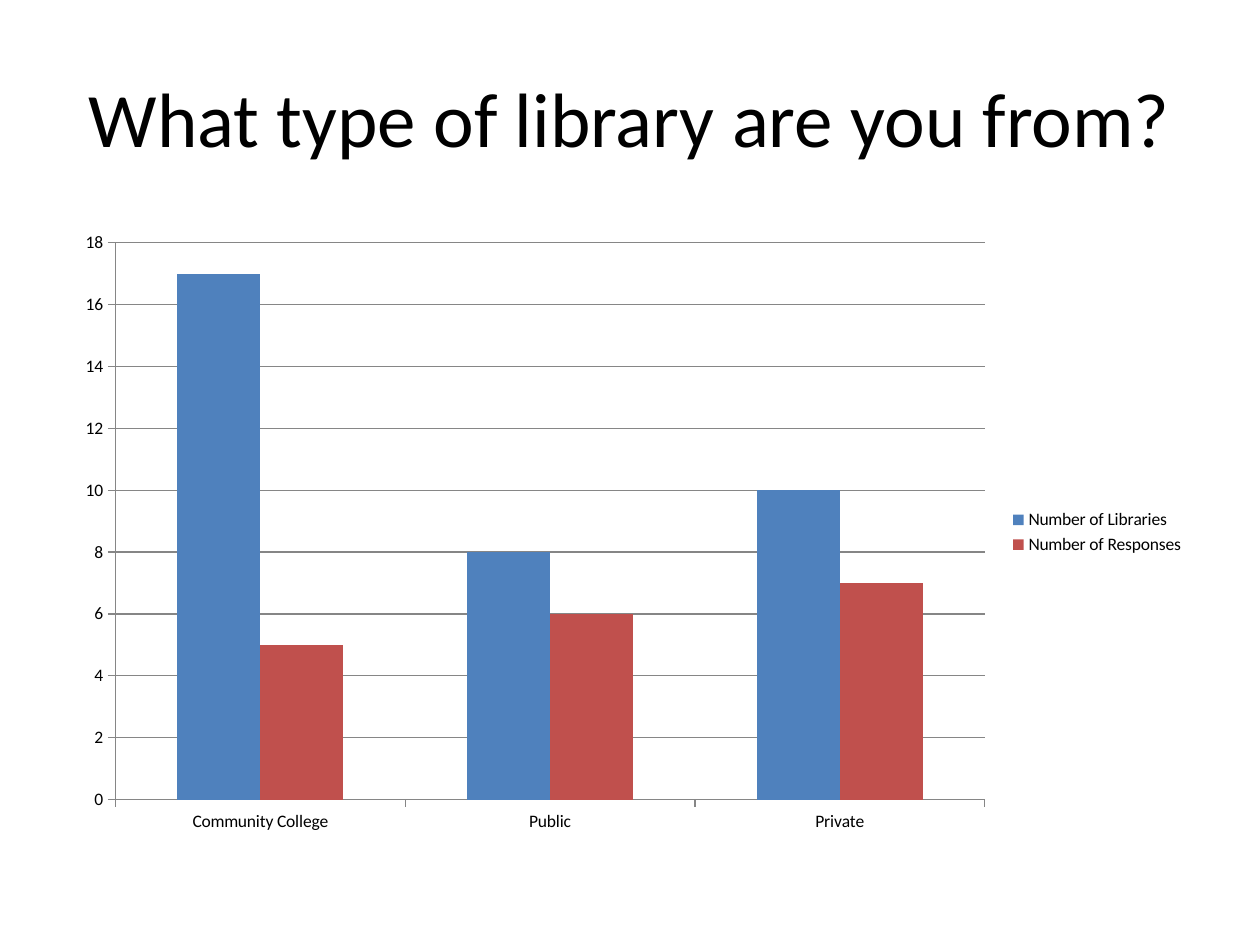
from pptx import Presentation
from pptx.chart.data import CategoryChartData
from pptx.dml.color import RGBColor
from pptx.enum.chart import XL_CHART_TYPE as Kind, XL_LEGEND_POSITION as Side, XL_TICK_MARK as Tick
from pptx.enum.text import MSO_ANCHOR as Anchor, PP_ALIGN as Align
from pptx.util import Inches, Pt


def color(code):
    return RGBColor.from_string(code)


class Deck:
    """Style of the deck and its current slide."""
    font = "Calibri"
    ink = "000000"
    rule = "868686"

    def __init__(self, width, height):
        self.prs = Presentation()
        self.prs.slide_width = Inches(width)
        self.prs.slide_height = Inches(height)
        self.slide = self.prs.slides.add_slide(self.prs.slide_layouts[5])

    def style(self, font, size):
        font.name = self.font
        font.size = Pt(size)
        font.color.rgb = color(self.ink)

    def line(self, fmt):
        fmt.line.color.rgb = color(self.rule)
        fmt.line.width = Pt(0.75)

    def title(self, text, box, size=44):
        shape = self.slide.shapes.title
        shape.left, shape.top, shape.width, shape.height = map(Inches, box)
        frame = shape.text_frame
        frame.text = text
        frame.word_wrap = True
        frame.vertical_anchor = Anchor.MIDDLE
        para = frame.paragraphs[0]
        para.alignment = Align.CENTER
        self.style(para.runs[0].font, size)

    def columns(self, cats, series, box, size=10):
        """Add a clustered column chart; series holds (name, values, fill)."""
        data = CategoryChartData()
        data.categories = cats
        for name, vals, _ in series:
            data.add_series(name, vals)
        chart = self.slide.shapes.add_chart(
            Kind.COLUMN_CLUSTERED, *map(Inches, box), data).chart
        self.style(chart.font, size)
        chart.has_title = False
        chart.has_legend = True
        chart.legend.position = Side.RIGHT
        chart.legend.include_in_layout = False

        plot = chart.plots[0]
        plot.vary_by_categories = False
        plot.gap_width = 150
        plot.overlap = 0
        for item, (_, _, fill) in zip(plot.series, series):
            item.format.fill.solid()
            item.format.fill.fore_color.rgb = color(fill)

        for axis in (chart.category_axis, chart.value_axis):
            axis.major_tick_mark = Tick.OUTSIDE
            axis.minor_tick_mark = Tick.NONE
            self.line(axis.format)
        scale = chart.value_axis
        scale.minimum_scale, scale.maximum_scale, scale.major_unit = 0, 18, 2
        scale.has_major_gridlines = True
        self.line(scale.major_gridlines.format)

    def save(self):
        self.prs.save("out.pptx")


def main():
    deck = Deck(10, 7.5)
    deck.title("What type of library are you from?", (0.5, 0.3, 9, 1.25))
    deck.columns(
        ["Community College", "Public", "Private"],
        [("Number of Libraries", (17, 8, 10), "4F81BD"),
         ("Number of Responses", (5, 6, 7), "C0504D")],
        (0.5, 1.75, 9, 4.95))
    deck.save()


if __name__ == "__main__":
    main()
